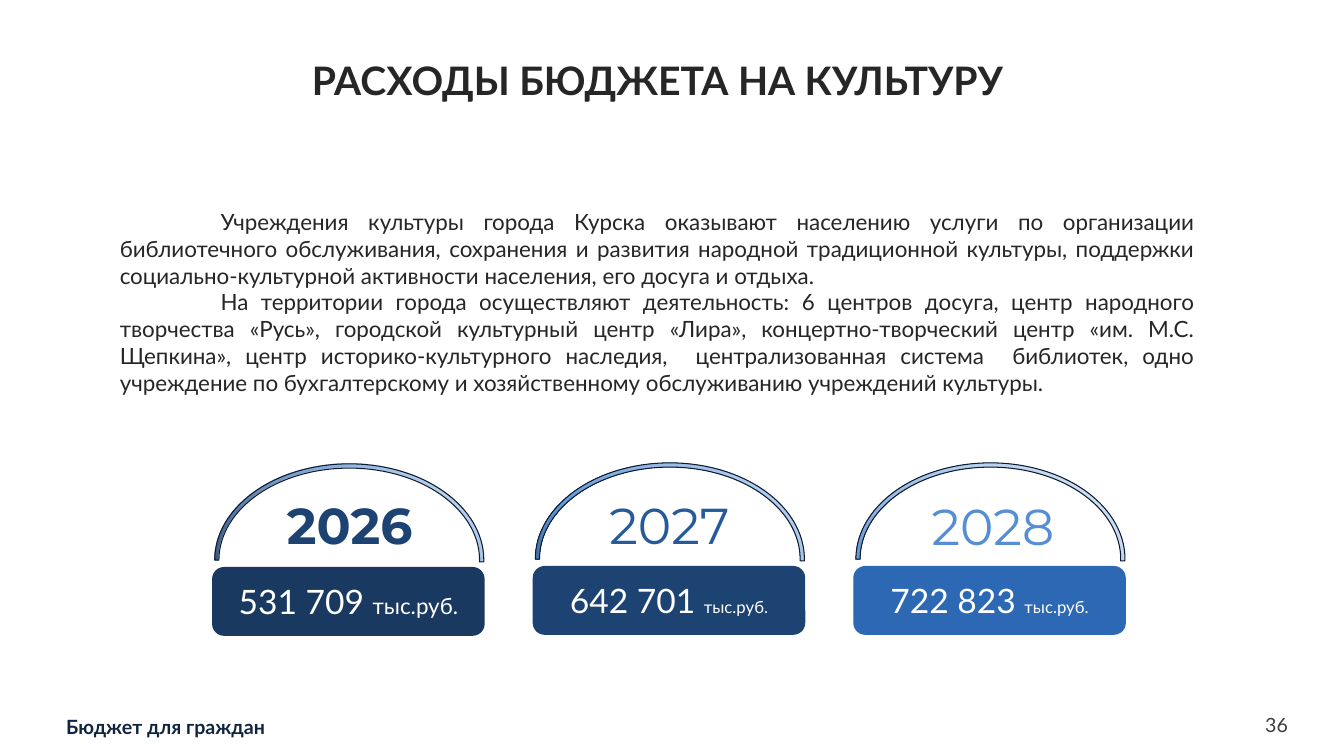
from lxml import etree
from pptx import Presentation
from pptx.dml.color import RGBColor
from pptx.enum.shapes import MSO_SHAPE as SHAPE
from pptx.enum.text import MSO_ANCHOR as ANCHOR, PP_ALIGN as ALIGN
from pptx.oxml import parse_xml
from pptx.oxml.ns import nsdecls, qn
from pptx.util import Pt

INK = "262626"
PARAGRAPHS = [
    "Учреждения культуры города Курска оказывают населению услуги по организации "
    "библиотечного обслуживания, сохранения и развития народной традиционной культуры, "
    "поддержки социально-культурной активности населения, его досуга и отдыха.",
    "На территории города осуществляют деятельность: 6 центров досуга, центр народного "
    "творчества «Русь», городской культурный центр «Лира», концертно-творческий центр "
    "«им. М.С. Щепкина», центр историко-культурного наследия,  централизованная система  "
    "библиотек, одно учреждение по бухгалтерскому и хозяйственному обслуживанию "
    "учреждений культуры.",
]
CARDS = [
    ("2026", "531 709 ", 16, "193961", "1D4373", True, 405.5, 190.8, 349.2,
     [(0, "10253F", 100), (40, "265795", 74), (70, "538CD3", 63), (100, "C6D9F1", 61)]),
    ("2027", "642 701 ", 12, "1D4373", "265A9A", False, 404.8, 419.2, 349.2,
     [(0, "1D4373", 100), (40, "669AD9", 100), (70, "99BBE6", 100), (100, "CCDDF2", 100)]),
    ("2028", "722 823 ", 12, "2C68B3", "558ED5", False, 404.8, 650.2, 349.9,
     [(0, "2C68B3", 100), (40, "99BBE6", 100), (70, "BBD2EE", 100), (100, "DDE8F7", 100)]),
]
CARD_LEFT, CARD_STEP = 152, 229


def rgb(value):
    return RGBColor.from_string(value)


def set_font(font, size, color, bold=False, name="Lato"):
    font.name, font.size, font.bold = name, Pt(size), bold
    font.color.rgb = rgb(color)


def add_text(s, box, paragraphs, size, color, align=ALIGN.LEFT, bold=False,
             name="Lato", inset=None, indent=0, anchor=ANCHOR.TOP):
    tf = s.shapes.add_textbox(*map(Pt, box)).text_frame
    tf.word_wrap = True
    tf.vertical_anchor = anchor
    if inset is not None:
        tf.margin_left = tf.margin_right = tf.margin_top = tf.margin_bottom = Pt(inset)
    for i, text in enumerate(paragraphs):
        p = tf.add_paragraph() if i else tf.paragraphs[0]
        p.text, p.alignment = text, align
        if indent:
            p._p.get_or_add_pPr().set("indent", str(Pt(indent)))
        set_font(p.font, size, color, bold, name)


def add_title(s, text):
    sp = s.shapes.title
    sp.left, sp.top, sp.width, sp.height = Pt(41.8), Pt(31.7), Pt(855.4), Pt(54.7)
    sp.text_frame.vertical_anchor = ANCHOR.MIDDLE
    p = sp.text_frame.paragraphs[0]
    p.text, p.alignment, p.line_spacing = text, ALIGN.CENTER, 0.9
    set_font(p.font, 28, INK, True)


def fill_radial(sp, stops):
    sp.fill.gradient()
    grad = sp._element.spPr.find(qn("a:gradFill"))
    new = parse_xml(f'<a:gradFill {nsdecls("a")} rotWithShape="1"><a:gsLst/>'
                    '<a:path path="circle"><a:fillToRect t="100000" r="100000"/>'
                    '</a:path></a:gradFill>')
    for pos, color, alpha in stops:
        gs = etree.SubElement(new[0], qn("a:gs"), pos=str(pos * 1000))
        clr = etree.SubElement(gs, qn("a:srgbClr"), val=color)
        if alpha < 100:
            etree.SubElement(clr, qn("a:alpha"), val=str(alpha * 1000))
    grad.getparent().replace(grad, new)


def add_arc(s, left, top, stops):
    sp = s.shapes.add_shape(SHAPE.BLOCK_ARC, Pt(left), Pt(top), Pt(192.2), Pt(137.5))
    sp.shadow.inherit = False
    for i, value in enumerate((108, 0.467, 0.022)):
        sp.adjustments[i] = value
    fill_radial(sp, stops)
    sp.line.color.rgb = rgb("0C1B2F")
    sp.line.width = Pt(0)


def add_amount(s, left, top, amount, unit_size, color):
    sp = s.shapes.add_shape(SHAPE.ROUNDED_RECTANGLE, Pt(left), Pt(top), Pt(193.7), Pt(48.2))
    sp.shadow.inherit = False
    sp.fill.solid()
    sp.fill.fore_color.rgb = sp.line.color.rgb = rgb(color)
    sp.line.width = Pt(1)
    sp.text_frame.vertical_anchor = ANCHOR.MIDDLE
    p = sp.text_frame.paragraphs[0]
    p.alignment = ALIGN.CENTER
    for text, size in ((amount, 24), ("тыс.руб.", unit_size)):
        r = p.add_run()
        r.text = text
        set_font(r.font, size, "FFFFFF")


def main():
    prs = Presentation()
    prs.slide_width, prs.slide_height = Pt(960), Pt(540)
    s = prs.slides.add_slide(prs.slide_layouts[5])
    add_title(s, "РАСХОДЫ БЮДЖЕТА НА КУЛЬТУРУ")
    add_text(s, (78.5, 145, 782, 142), PARAGRAPHS, 16, INK, ALIGN.JUSTIFY, indent=72)
    for i, (year, amount, unit_size, color, year_color, bold, top, year_left,
            year_top, stops) in enumerate(CARDS):
        left = CARD_LEFT + i * CARD_STEP
        add_arc(s, left + 1.4, top - 74.2, stops)
        add_amount(s, left, top, amount, unit_size, color)
        add_text(s, (year_left, year_top, 118, 51), [year], 36, year_color,
                 ALIGN.CENTER, bold, "Montserrat")
    add_text(s, (47.2, 510.5, 840, 17), ["Бюджет для граждан"], 14, "10253F",
             bold=True, inset=0)
    add_text(s, (902, 509, 18, 17), ["36"], 14, "3C3C3C", ALIGN.RIGHT, inset=0,
             anchor=ANCHOR.MIDDLE)
    prs.save("out.pptx")


if __name__ == "__main__":
    main()
